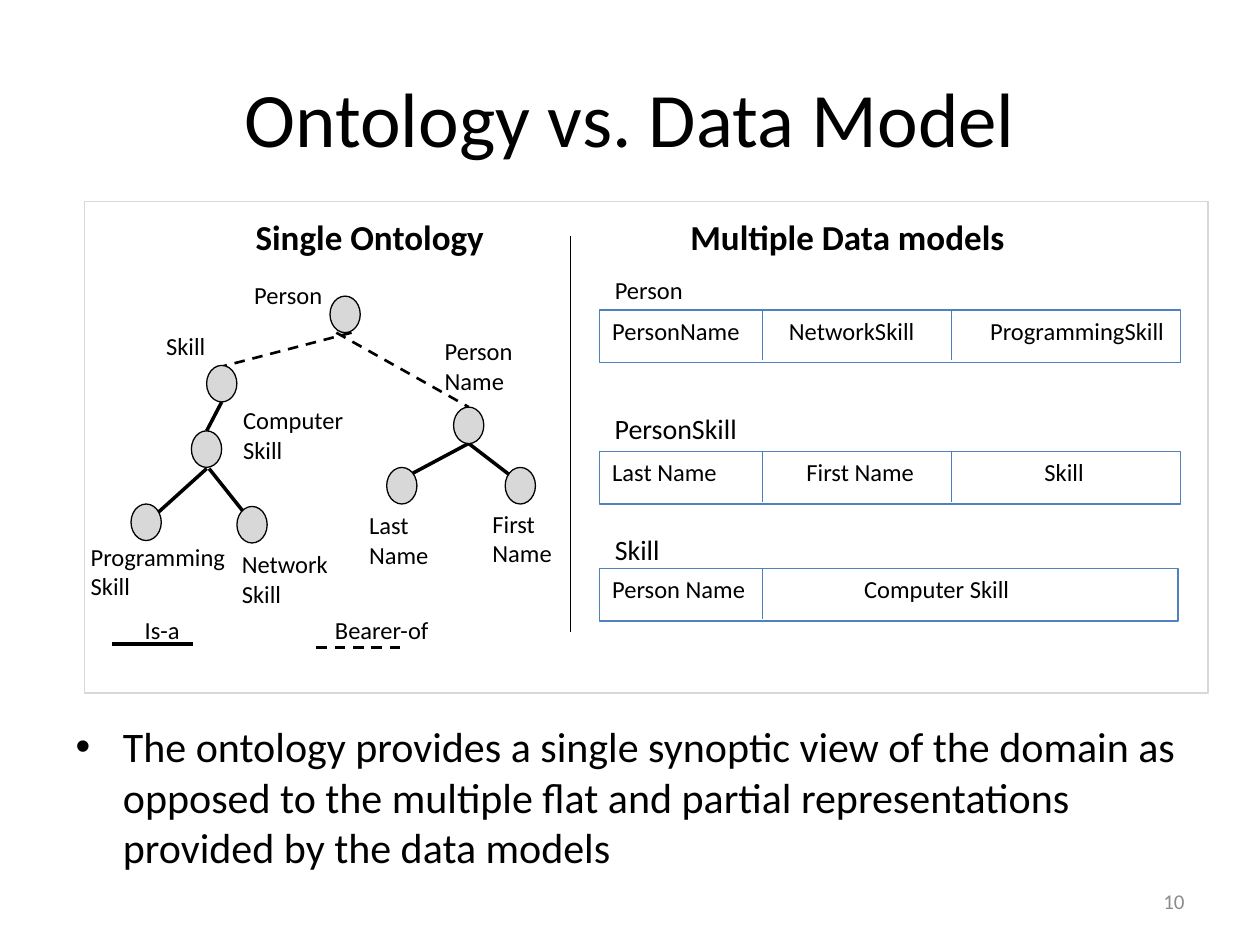
from dataclasses import dataclass

from lxml import etree
from pptx import Presentation
from pptx.dml.color import RGBColor
from pptx.enum.dml import MSO_LINE
from pptx.enum.shapes import MSO_CONNECTOR, MSO_SHAPE
from pptx.enum.text import MSO_ANCHOR, PP_ALIGN
from pptx.oxml.ns import qn
from pptx.util import Pt

STRAIGHT = MSO_CONNECTOR.STRAIGHT
RECT, DOT = MSO_SHAPE.RECTANGLE, MSO_SHAPE.FLOWCHART_CONNECTOR
DASH = MSO_LINE.DASH
TOP, MIDDLE = MSO_ANCHOR.TOP, MSO_ANCHOR.MIDDLE
LEFT, CENTER, RIGHT = PP_ALIGN.LEFT, PP_ALIGN.CENTER, PP_ALIGN.RIGHT

FONT = "Calibri"
COLORS = {"text": "000000", "gray": "D8D8D8", "frame": "4F81BD",
          "rule": "4B7EBC", "number": "8C8C8C"}
NODE_W, NODE_H = 17.3, 20.9
ROW_X, ROW_H = 342.7, 30.2
RULE_H = 28.8


@dataclass
class Label:
    text: str
    x: float
    y: float
    w: float
    h: float
    size: float = 14
    bold: bool = False
    inset: float = 7.2


@dataclass
class Link:
    x1: float
    y1: float
    x2: float
    y2: float
    width: float = 2
    dashed: bool = False
    color: str = "text"


@dataclass
class Row:
    """One data model: its fields start at the tab stops, rules part them."""
    fields: list[str]
    y: float
    w: float
    tabs: list[float]
    rules: list[float]


LABELS = [
    Label("Single Ontology", 139, 119.5, 165.6, 51.8, 20, True),
    Label("Multiple Data models", 387.4, 119.5, 280, 41.8, 20, True),
    Label("Person", 138.2, 156.2, 90, 37.4),
    Label("Skill", 87.8, 185.8, 62, 48.2),
    Label("Computer Skill", 131.8, 228.2, 95, 64),
    Label("Programming\nSkill", 51.8, 306, 97.2, 47.5, inset=0),
    Label("Network\nSkill", 138.2, 310.3, 67, 38.2, inset=0),
    Label("Person Name", 247, 188.6, 80, 64.8),
    Label("Last Name", 203.8, 288, 64.8, 64),
    Label("First Name", 274.3, 287.3, 67.7, 64),
    Label("Is-a", 75.6, 347.8, 60, 26),
    Label("Bearer-of", 184.3, 347.8, 90, 26),
    Label("Person", 344.2, 153.4, 90, 37.4),
    Label("PersonSkill", 344.2, 231.8, 103, 37.4, 16),
    Label("Skill", 344.2, 301, 90, 37.4, 16),
]

LINKS = [
    Link(200.9, 190.1, 126.7, 209.5, 1.5, True),
    Link(192.2, 190.1, 267.8, 232.6, 1.5, True),
    Link(126.7, 229.7, 118.1, 246.2),
    Link(118.1, 267.8, 89.3, 293.8),
    Link(119.5, 267.8, 139, 292.3),
    Link(267.8, 253.4, 235.4, 270.7),
    Link(267.8, 253.4, 298.8, 277.2),
    Link(64.1, 367.9, 110.2, 367.9),
    Link(180.7, 370.1, 231.1, 370.1, 1.5, True),
    Link(326.2, 134.6, 326.2, 361.4, 0.75),
]

NODES = [(188.6, 169.2), (118.1, 208.8), (109.4, 246.2), (74.9, 288),
         (135.4, 289.4), (259.2, 232.6), (221, 267.1), (288.7, 267.1)]

ROWS = [
    Row(["PersonName", "NetworkSkill", "ProgrammingSkill"],
        177.1, 331.9, [101, 216], [435.6, 543.6]),
    Row(["Last Name", "First Name", "Skill"],
        257.8, 331.9, [111, 247], [435.6, 543.6]),
    Row(["Person Name", "Computer Skill"], 324.7, 330.5, [144], [435.6]),
]


def paint(color: str) -> RGBColor:
    return RGBColor.from_string(COLORS[color])


def style(frame, size: float, color: str = "text", bold: bool = False,
          align=LEFT, anchor=TOP) -> None:
    frame.word_wrap = True
    frame.vertical_anchor = anchor
    for para in frame.paragraphs:
        para.alignment = align
        for run in para.runs:
            run.font.name = FONT
            run.font.size = Pt(size)
            run.font.bold = bold
            run.font.color.rgb = paint(color)


def place(shape, x: float, y: float, w: float, h: float) -> None:
    shape.left, shape.top = Pt(x), Pt(y)
    shape.width, shape.height = Pt(w), Pt(h)


def draw_shape(slide, kind, x: float, y: float, w: float, h: float,
               line: str, fill: str | None = None):
    shape = slide.shapes.add_shape(kind, Pt(x), Pt(y), Pt(w), Pt(h))
    shape.shadow.inherit = False
    if fill:
        shape.fill.solid()
        shape.fill.fore_color.rgb = paint(fill)
    else:
        shape.fill.background()
    shape.line.color.rgb = paint(line)
    shape.line.width = Pt(0.75)
    return shape


def draw_label(slide, label: Label):
    box = slide.shapes.add_textbox(Pt(label.x), Pt(label.y),
                                   Pt(label.w), Pt(label.h))
    box.text_frame.text = label.text
    box.text_frame.margin_left = Pt(label.inset)
    style(box.text_frame, label.size, bold=label.bold)
    return box


def draw_link(slide, link: Link) -> None:
    line = slide.shapes.add_connector(STRAIGHT, Pt(link.x1), Pt(link.y1),
                                      Pt(link.x2), Pt(link.y2))
    line.line.color.rgb = paint(link.color)
    line.line.width = Pt(link.width)
    if link.dashed:
        line.line.dash_style = DASH
    etree.SubElement(line.element.spPr, qn("a:effectLst"))


def draw_row(slide, row: Row) -> None:
    box = draw_shape(slide, RECT, ROW_X, row.y, row.w, ROW_H, "frame")
    box.text_frame.text = "\t".join(row.fields)
    style(box.text_frame, 14)
    props = box.text_frame.paragraphs[0]._p.get_or_add_pPr()
    stops = etree.SubElement(props, qn("a:tabLst"))
    for tab in row.tabs:
        etree.SubElement(stops, qn("a:tab"), pos=str(Pt(tab)), algn="l")
    for x in row.rules:
        draw_link(slide, Link(x, row.y, x, row.y + RULE_H, 0.75, color="rule"))


def main() -> None:
    deck = Presentation()
    deck.slide_width, deck.slide_height = Pt(720), Pt(540)
    slide = deck.slides.add_slide(deck.slide_layouts[1])

    title, body = slide.placeholders
    place(title, 36, 21.6, 648, 90)
    title.text_frame.text = "Ontology vs. Data Model"
    style(title.text_frame, 44, align=CENTER, anchor=MIDDLE)
    place(body, 36, 408.2, 648, 102.2)
    body.text_frame.text = (
        "The ontology provides a single synoptic view of the domain as opposed "
        "to the multiple flat and partial representations provided by the data "
        "models")
    style(body.text_frame, 24)

    draw_shape(slide, RECT, 48.2, 115.2, 642.2, 280.8, "gray")
    for label in LABELS:
        draw_label(slide, label)
    for link in LINKS:
        draw_link(slide, link)
    for x, y in NODES:
        draw_shape(slide, DOT, x, y, NODE_W, NODE_H, "text", "gray")
    for row in ROWS:
        draw_row(slide, row)

    number = draw_label(slide, Label("10", 516.2, 500.4, 167.8, 28.8))
    style(number.text_frame, 12, "number", align=RIGHT, anchor=MIDDLE)
    deck.save("out.pptx")


if __name__ == "__main__":
    main()
